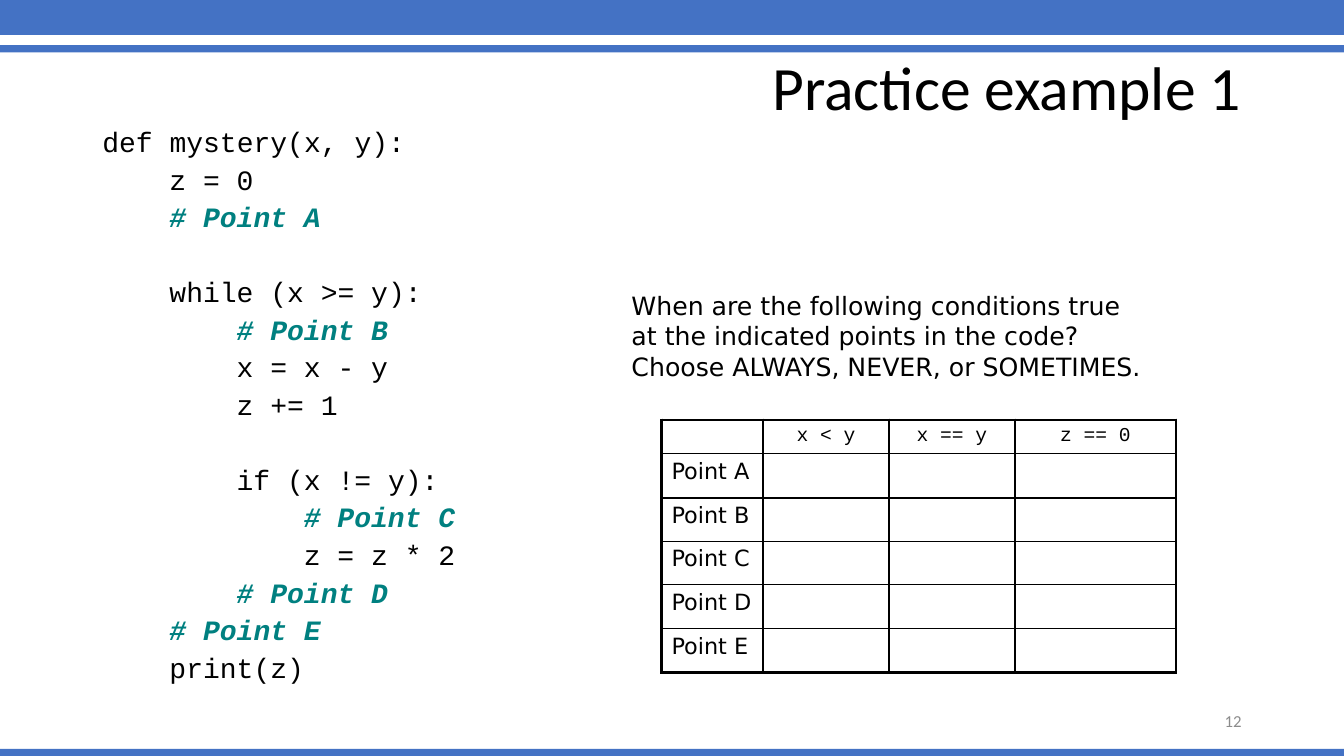
from pptx import Presentation
from pptx.dml.color import RGBColor
from pptx.enum.shapes import MSO_SHAPE
from pptx.enum.text import MSO_ANCHOR, PP_ALIGN
from pptx.oxml.ns import qn
from pptx.util import Pt
from lxml.etree import SubElement

COLORS = {"bar": "4472C4", "text": "000000", "comment": "008080", "number": "8C8C8C"}
CODE = [
    [(0, "def mystery(x, y):"), (1, "z = 0"), (1, "# Point A")],
    [(1, "while (x >= y):"), (2, "# Point B"), (2, "x = x - y"), (2, "z += 1")],
    [(2, "if (x != y):"), (3, "# Point C"), (3, "z = z * 2"), (2, "# Point D"),
     (1, "# Point E"), (1, "print(z)")],
]
CONDITIONS = ["x < y", "x == y", "z == 0"]
POINTS = ["Point A", "Point B", "Point C", "Point D", "Point E"]
QUESTION = [
    "When are the following conditions true\vat the indicated points in the code?",
    "Choose ALWAYS, NEVER, or SOMETIMES.",
]
COLUMN_WIDTHS = [72.5, 90, 90, 115]
LABEL_ROWS = [24] + [31.25] * len(POINTS)
ANSWER_ROWS = [24, 31.7, 31, 31, 31.5, 31.5]
CODE_INDENT = 48
CODE_SPACING = 10
BLANK_LINE = 26.8


def write(p, text, font="Calibri", size=18, color="text", bold=False, italic=False,
          align=PP_ALIGN.LEFT, line=None, before=0, indent=0):
    p.text = text
    p.alignment = align
    p.space_before = Pt(before)
    if line:
        p.line_spacing = line
    if indent:
        p._p.get_or_add_pPr().set("marL", str(Pt(indent)))
    for r in p.runs:
        r.font.name = font
        r.font.size = Pt(size)
        r.font.bold = bold
        r.font.italic = italic
        r.font.color.rgb = RGBColor.from_string(COLORS[color])


def add_bar(s, top, height):
    sp = s.shapes.add_shape(MSO_SHAPE.RECTANGLE, 0, Pt(top), Pt(960), Pt(height))
    sp.shadow.inherit = False
    sp.fill.solid()
    sp.fill.fore_color.rgb = RGBColor.from_string(COLORS["bar"])
    sp.line.fill.background()


def add_text_frame(s, left, top, width, height, anchor=MSO_ANCHOR.TOP):
    tf = s.shapes.add_textbox(Pt(left), Pt(top), Pt(width), Pt(height)).text_frame
    tf.word_wrap = True
    tf.vertical_anchor = anchor
    return tf


def next_paragraph(tf, first):
    return tf.paragraphs[0] if first else tf.add_paragraph()


def add_title(s, text):
    sp = s.shapes.title
    sp.left, sp.top, sp.width, sp.height = Pt(66), Pt(28.8), Pt(828), Pt(72)
    sp.text_frame.vertical_anchor = MSO_ANCHOR.MIDDLE
    write(sp.text_frame.paragraphs[0], text, size=44, align=PP_ALIGN.RIGHT, line=0.9)


def add_code(s, blocks):
    tf = add_text_frame(s, 66, 92, 828, 414)
    for b, block in enumerate(blocks):
        for i, (depth, text) in enumerate(block):
            is_comment = text.startswith("#")
            gap = BLANK_LINE if b and i == 0 else 0
            write(next_paragraph(tf, b == i == 0), text, font="Courier New", size=20,
                  color="comment" if is_comment else "text",
                  bold=is_comment, italic=is_comment, line=0.7,
                  before=CODE_SPACING + gap, indent=depth * CODE_INDENT)


def add_question(s, lines):
    tf = add_text_frame(s, 444, 204, 402, 72)
    for i, text in enumerate(lines):
        write(next_paragraph(tf, i == 0), text, font="DejaVu Sans")


def set_borders(cell, outer_sides):
    tcPr = cell._tc.get_or_add_tcPr()
    for side in ("L", "R", "T", "B"):
        width = Pt(2.25 if side in outer_sides else 1)
        ln = SubElement(tcPr, qn("a:ln" + side), w=str(width))
        fill = SubElement(ln, qn("a:solidFill"))
        SubElement(fill, qn("a:srgbClr"), val=COLORS["text"])


def add_grid(s, left, top, widths, heights):
    rows, cols = len(heights), len(widths)
    table = s.shapes.add_table(rows, cols, Pt(left), Pt(top),
                               Pt(sum(widths)), Pt(sum(heights))).table
    table.first_row = table.horz_banding = False
    for column, width in zip(table.columns, widths):
        column.width = Pt(width)
    for row, height in zip(table.rows, heights):
        row.height = Pt(height)
    for r in range(rows):
        for c in range(cols):
            cell = table.cell(r, c)
            edges = {"L": c == 0, "R": c == cols - 1, "T": r == 0, "B": r == rows - 1}
            set_borders(cell, [side for side, outer in edges.items() if outer])
            cell.fill.background()
            cell.margin_top = cell.margin_bottom = 0
    return table


def label_cell(cell, text, **style):
    cell.margin_top = cell.margin_bottom = Pt(3.6)
    write(cell.text_frame.paragraphs[0], text, **style)


def label_table(table):
    for c, text in enumerate(CONDITIONS, 1):
        label_cell(table.cell(0, c), text, font="Courier New", size=14,
                   align=PP_ALIGN.CENTER)
    for r, text in enumerate(POINTS, 1):
        label_cell(table.cell(r, 0), text, font="DejaVu Sans", size=16)


def add_slide_number(s, text):
    tf = add_text_frame(s, 678, 500.5, 216, 28.8, MSO_ANCHOR.MIDDLE)
    write(tf.paragraphs[0], text, size=12, color="number", align=PP_ALIGN.RIGHT)


def main():
    prs = Presentation()
    prs.slide_width, prs.slide_height = Pt(960), Pt(540)
    s = prs.slides.add_slide(prs.slide_layouts[5])
    for top, height in [(0, 25), (32.2, 5.2), (535, 5)]:
        add_bar(s, top, height)
    add_title(s, "Practice example 1")
    add_code(s, CODE)
    label_grid, answer_grid = [add_grid(s, 472.5, 300, COLUMN_WIDTHS, heights)
                               for heights in (LABEL_ROWS, ANSWER_ROWS)]
    label_table(label_grid)
    add_question(s, QUESTION)
    add_slide_number(s, "12")
    prs.save("out.pptx")


if __name__ == "__main__":
    main()
